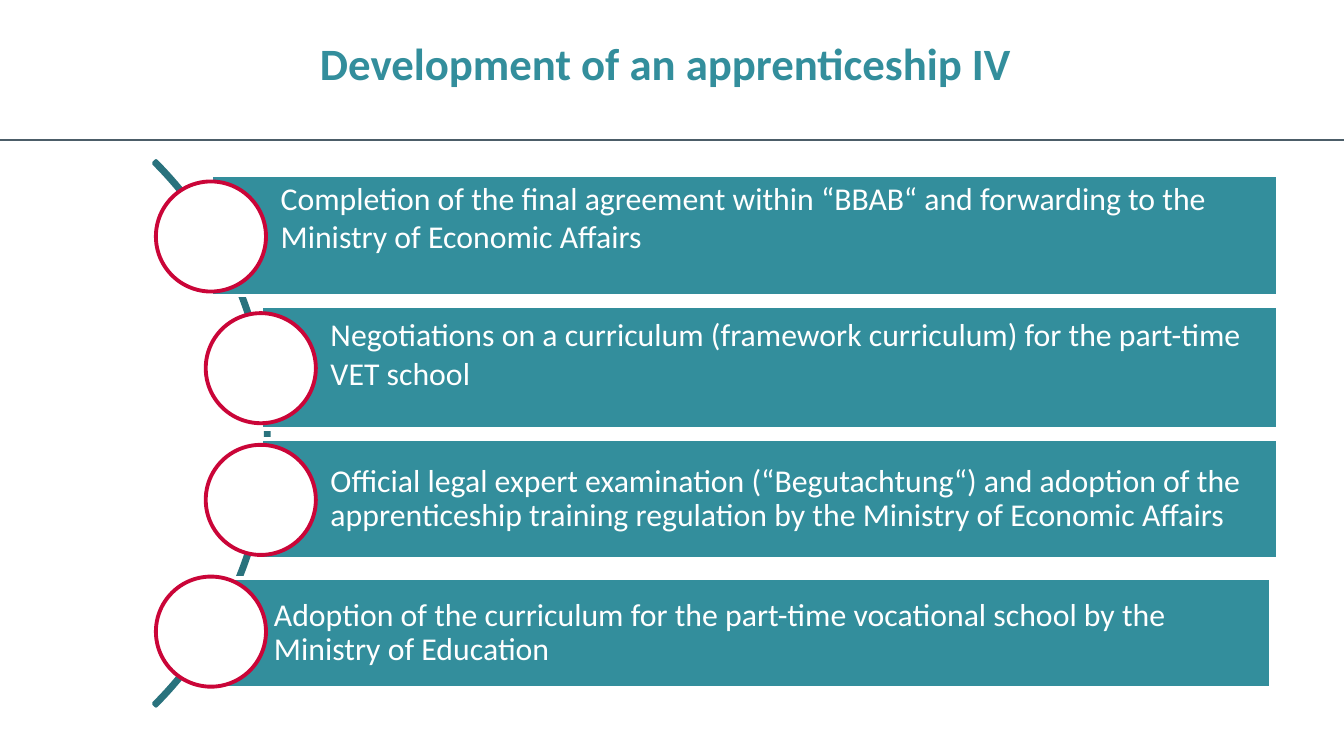
"""Build a slide with four apprenticeship steps along an arc."""
from lxml import etree
from pptx import Presentation
from pptx import util as u
from pptx.dml.color import RGBColor
from pptx.enum import shapes, text
from pptx.oxml.ns import qn

TITLE = "Development of an apprenticeship IV"
STEPS = [
    {"text": "Completion of the final agreement within “BBAB“ and forwarding to the "
             "Ministry of Economic Affairs",
     "bar": (113, 93.6, 571.7, 64.8), "circle_left": 83.5, "lift": 20, "spacing": 1.0},
    {"text": "Negotiations on a curriculum (framework curriculum) for the part-time "
             "VET school",
     "bar": (139.7, 164.2, 545, 65.5), "circle_left": 110.2, "lift": 15.4, "spacing": 1.0},
    {"text": "Official legal expert examination (“Begutachtung“) and adoption of the "
             "apprenticeship training regulation by the Ministry of Economic Affairs",
     "bar": (139.7, 235.4, 545, 64.1), "circle_left": 110.2, "lift": 0, "spacing": 0.9},
    {"text": "Adoption of the curriculum for the part-time vocational school by the "
             "Ministry of Education",
     "bar": (109.4, 309.6, 571.7, 59), "circle_left": 83.5, "lift": 0, "spacing": 0.9},
]
COLORS = {"teal": "338E9C", "dark_teal": "29727D", "red": "CA0538",
          "slate": "4C5D68", "white": "FFFFFF"}
FONT = "Calibri"
OUTLINE = 2.08
CIRCLE_TOP, CIRCLE_PITCH, CIRCLE_SIZE = 97.2, 70.56, 59


def color(name):
    return RGBColor.from_string(COLORS[name])


def add_preset(page, kind, bounds, line, fill=None):
    shape = page.shapes.add_shape(kind, *map(u.Pt, bounds))
    shape.shadow.inherit = False
    if fill:
        shape.fill.solid()
        shape.fill.fore_color.rgb = color(fill)
    else:
        shape.fill.background()
    shape.line.color.rgb = color(line)
    shape.line.width = u.Pt(OUTLINE)
    return shape


def write(box, words, size, tint, spacing, margins, anchor, bold=False):
    frame = box.text_frame
    frame.word_wrap = True
    frame.vertical_anchor = anchor
    (frame.margin_left, frame.margin_top,
     frame.margin_right, frame.margin_bottom) = map(u.Pt, margins)
    para = frame.paragraphs[0]
    para.text = words
    para.alignment = text.PP_ALIGN.LEFT
    para.line_spacing = spacing
    para.font.name = FONT
    para.font.size = u.Pt(size)
    para.font.bold = bold
    para.font.color.rgb = color(tint)


def main():
    deck = Presentation()
    deck.slide_width, deck.slide_height = u.Pt(720), u.Pt(405)
    page = deck.slides.add_slide(deck.slide_layouts[6])

    rule = page.shapes.add_connector(
        shapes.MSO_CONNECTOR.STRAIGHT, u.Pt(720), u.Pt(75), u.Pt(0), u.Pt(75))
    rule.line.color.rgb = color("slate")
    rule.line.width = u.Pt(1.5)
    etree.SubElement(rule._element.spPr, qn("a:effectLst"))

    arc = add_preset(page, shapes.MSO_SHAPE.BLOCK_ARC,
                     (-268.6, 25.9, 412.6, 412.6), "dark_teal")
    for index, value in enumerate((189, 27, 0.004)):
        arc.adjustments[index] = value

    for index, step in enumerate(STEPS):
        bar = add_preset(page, shapes.MSO_SHAPE.RECTANGLE, step["bar"], "white", "teal")
        write(bar, step["text"], 17, "white", step["spacing"],
              (37.4, 0, 3.6, step["lift"]), text.MSO_ANCHOR.MIDDLE)
        circle_top = CIRCLE_TOP + index * CIRCLE_PITCH
        add_preset(page, shapes.MSO_SHAPE.OVAL,
                   (step["circle_left"], circle_top, CIRCLE_SIZE, CIRCLE_SIZE),
                   "red", "white")

    title = page.shapes.add_textbox(u.Pt(171.4), u.Pt(18), u.Pt(378), u.Pt(49))
    write(title, TITLE, 24, "teal", u.Pt(30), (0, 0, 0, 0),
          text.MSO_ANCHOR.TOP, bold=True)
    deck.save("out.pptx")


if __name__ == "__main__":
    main()
